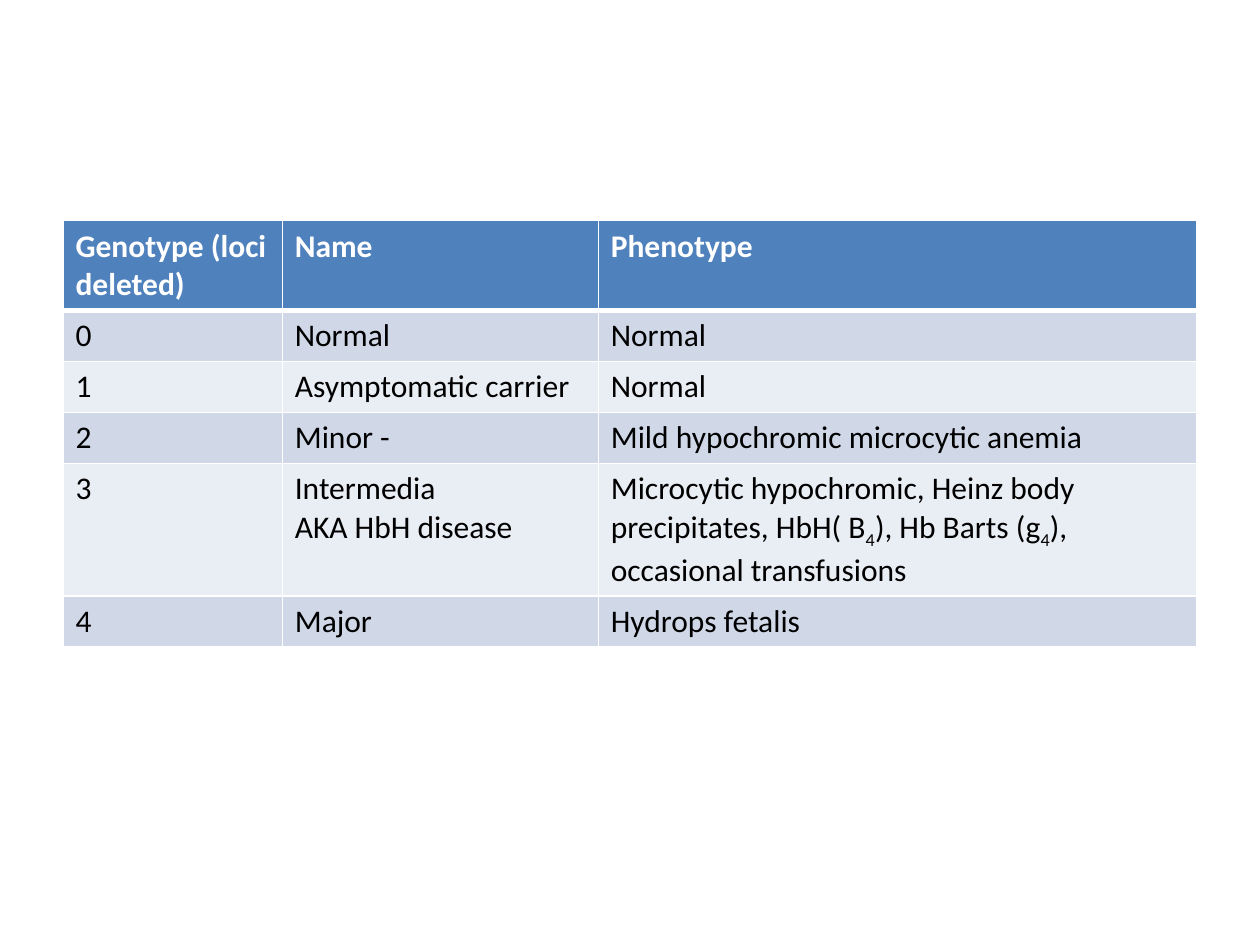
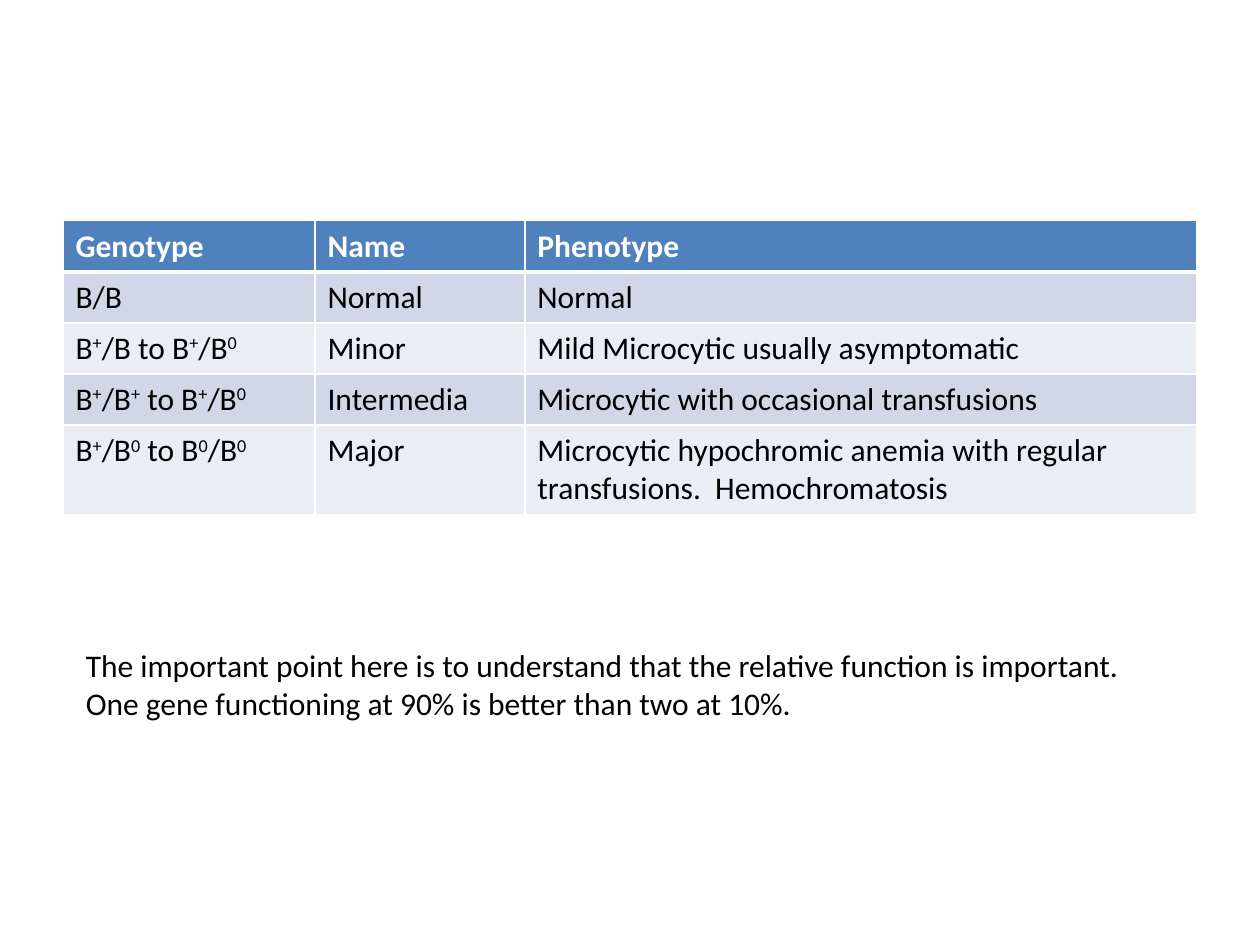
from dataclasses import dataclass

from lxml import etree
from pptx import Presentation
from pptx.dml.color import RGBColor
from pptx.enum.text import MSO_AUTO_SIZE
from pptx.oxml.ns import qn
from pptx.util import Cm, Pt

FIT_SHAPE = MSO_AUTO_SIZE.SHAPE_TO_FIT_TEXT
BLANK_LAYOUT = 6
BASELINES = {"^": "30000", "_": "-25000"}


@dataclass(frozen=True)
class Theme:
    font: str = "Calibri"
    size: Pt = Pt(18)
    text: str = "000000"
    header_text: str = "FFFFFF"
    header_fill: str = "4F81BD"
    band_fills: tuple = ("D0D8E8", "E9EDF4")
    border: str = "FFFFFF"
    border_width: Pt = Pt(1)
    header_rule: Pt = Pt(3)


THEME = Theme()

TABLE_LEFT, TABLE_TOP = Cm(1.27), Cm(4.45)
ROW_HEIGHT = Cm(1.03)

ALPHA_COLUMNS = (4.42, 6.37, 12.07)
ALPHA_ROWS = (
    ("Genotype (loci deleted)", "Name", "Phenotype"),
    ("0", "Normal", "Normal"),
    ("1", "Asymptomatic carrier", "Normal"),
    ("2", "Minor -", "Mild hypochromic microcytic anemia"),
    ("3", "Intermedia\nAKA HbH disease",
     "Microcytic hypochromic, Heinz body precipitates, HbH( B_4), "
     "Hb Barts (g_4), occasional transfusions"),
    ("4", "Major", "Hydrops fetalis"),
)

BETA_COLUMNS = (5.08, 4.23, 13.55)
BETA_ROWS = (
    ("Genotype", "Name", "Phenotype"),
    ("B/B", "Normal", "Normal"),
    ("B^+/B to B^+/B^0", "Minor", "Mild Microcytic usually asymptomatic"),
    ("B^+/B^+ to B^+/B^0", "Intermedia",
     "Microcytic with occasional transfusions"),
    ("B^+/B^0 to B^0/B^0", "Major",
     "Microcytic hypochromic anemia with regular transfusions.  "
     "Hemochromatosis"),
)

TAKEAWAY = (
    "The important point here is to understand that the relative function is "
    "important.  One gene functioning at 90% is better than two at 10%."
)


def split_runs(marked):
    """Yield (text, baseline); ^ raises and _ lowers the next character."""
    plain = ""
    characters = iter(marked)
    for character in characters:
        if character in BASELINES:
            if plain:
                yield plain, None
            plain = ""
            yield next(characters), BASELINES[character]
        else:
            plain += character
    if plain:
        yield plain, None


def write_text(frame, marked, color, bold=False):
    for index, line in enumerate(marked.split("\n")):
        paragraph = frame.add_paragraph() if index else frame.paragraphs[0]
        font = paragraph.font
        font.name, font.size, font.bold = THEME.font, THEME.size, bold
        font.color.rgb = RGBColor.from_string(color)
        for text, baseline in split_runs(line):
            run = paragraph.add_run()
            run.text = text
            if baseline:
                run._r.get_or_add_rPr().set("baseline", baseline)


def set_borders(cell, widths):
    """Draw the sides in widths, keyed L, R, T, B in schema order."""
    properties = cell._tc.get_or_add_tcPr()
    for index, (side, width) in enumerate(widths.items()):
        line = etree.Element(qn(f"a:ln{side}"), w=str(width))
        fill = etree.SubElement(line, qn("a:solidFill"))
        etree.SubElement(fill, qn("a:srgbClr"), val=THEME.border)
        properties.insert(index, line)


def format_cell(cell, marked, row_index):
    is_header = row_index == 0
    thin = THEME.border_width
    if is_header:
        fill, color = THEME.header_fill, THEME.header_text
        borders = {"L": thin, "R": thin, "T": thin, "B": THEME.header_rule}
    else:
        fill, color = THEME.band_fills[(row_index - 1) % 2], THEME.text
        borders = {"L": thin, "R": thin, "B": thin}
    cell.fill.solid()
    cell.fill.fore_color.rgb = RGBColor.from_string(fill)
    set_borders(cell, borders)
    write_text(cell.text_frame, marked, color, bold=is_header)


def add_genotype_table(slide, column_widths, rows):
    table = slide.shapes.add_table(
        len(rows), len(column_widths), TABLE_LEFT, TABLE_TOP,
        Cm(sum(column_widths)), ROW_HEIGHT * len(rows)).table
    for column, width in zip(table.columns, column_widths):
        column.width = Cm(width)
    for row_index, row in enumerate(rows):
        for column_index, marked in enumerate(row):
            format_cell(table.cell(row_index, column_index), marked, row_index)


def add_takeaway(slide, text):
    frame = slide.shapes.add_textbox(
        Cm(1.48), Cm(12.9), Cm(22.65), Cm(1.8)).text_frame
    frame.word_wrap = True
    frame.auto_size = FIT_SHAPE
    write_text(frame, text, THEME.text)


def main():
    deck = Presentation()
    deck.slide_width, deck.slide_height = Cm(25.4), Cm(19.05)
    blank = deck.slide_layouts[BLANK_LAYOUT]

    alpha_slide = deck.slides.add_slide(blank)
    add_genotype_table(alpha_slide, ALPHA_COLUMNS, ALPHA_ROWS)

    beta_slide = deck.slides.add_slide(blank)
    add_genotype_table(beta_slide, BETA_COLUMNS, BETA_ROWS)
    add_takeaway(beta_slide, TAKEAWAY)

    deck.save("out.pptx")


if __name__ == "__main__":
    main()
